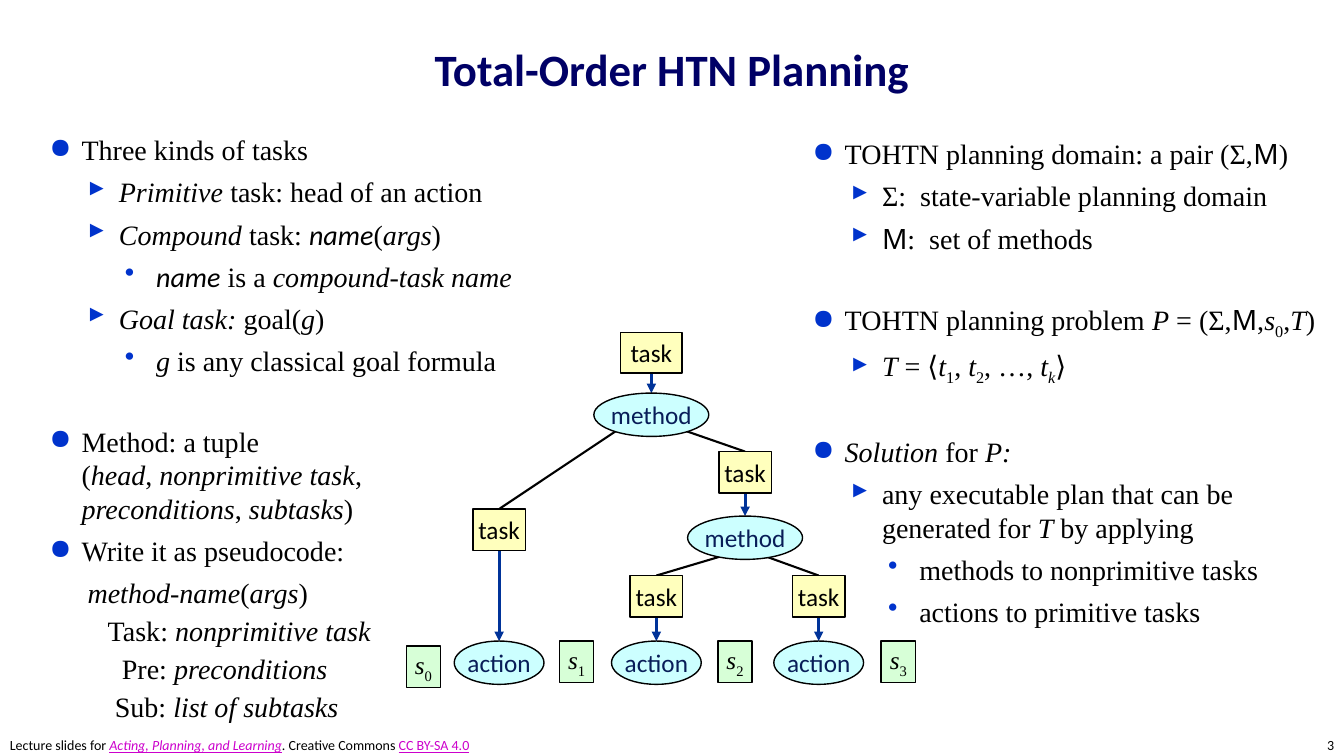
from lxml.etree import SubElement
from pptx import Presentation
from pptx.dml.color import RGBColor
from pptx.enum.shapes import MSO_CONNECTOR, MSO_SHAPE
from pptx.enum.text import MSO_ANCHOR, PP_ALIGN
from pptx.oxml.ns import qn
from pptx.util import Inches, Pt

TITLE = "Total-Order HTN Planning"
FOOT = "Lecture slides for |*Acting, Planning, and Learning*|. Creative Commons |CC BY-SA 4.0|"
PAGE = "3"

# Marks: * italic, _ subscript, ` Calibri, ^ Noto Sans, | link
LEFT = [
    ("dot", 0, "Three kinds of tasks"),
    ("tri", 6, "*Primitive *task: head of an action"),
    ("tri", 6, "*Compound *task: *`name`*(*args*)"),
    ("sub", 6, "*`name`* is a *compound-task name*"),
    ("tri", 6, "*Goal task:* goal(*g*)"),
    ("sub", 6, "*g* is any classical goal formula"),
    ("dot", 34, "Method: a tuple\n(*head*, *nonprimitive task*, *preconditions*, *subtasks*)"),
    ("dot", 6, "Write it as pseudocode:"),
    ("name", 6, "*method-name*(*args*)"),
    ("task", 3, "Task: *nonprimitive task*"),
    ("pre", 3, "Pre: *preconditions*"),
    ("list", 3, "Sub: *list of subtasks*"),
]
RIGHT = [
    ("dot", 0, "TOHTN planning domain: a pair (Σ,^M^)"),
    ("tri", 6, "Σ:\u00a0 state-variable planning domain"),
    ("tri", 6, "^M^:\u00a0 set of methods"),
    ("dot", 34, "TOHTN planning problem *P* = (Σ,^M^,*s*_0_,*T*)"),
    ("tri", 6, "*T* = ⟨*t*_1_, *t*_2_, …, *t*_*k*_⟩"),
    ("dot", 34, "*Solution* for *P:*"),
    ("tri", 6, "any executable plan that can be generated for *T* by applying"),
    ("sub", 6, "methods to nonprimitive tasks"),
    ("sub", 6, "actions to primitive tasks"),
]
LEVELS = {
    "dot": (0.32, 0.32, "●"), "tri": (0.69, 0.31, "▸"), "sub": (1.06, 0.31, "•"),
    "name": (0.38, 0, ""), "task": (0.58, 0, ""), "pre": (0.72, 0, ""), "list": (0.65, 0, ""),
}
KINDS = {
    "root": (MSO_SHAPE.RECTANGLE, 0.61, 0.40, "FFFFBD", "000000", "`task`"),
    "task": (MSO_SHAPE.RECTANGLE, 0.52, 0.41, "FFFFBD", "000000", "`task`"),
    "method": (MSO_SHAPE.OVAL, 1.14, 0.43, "CCFFFF", "081D58", "`method`"),
    "action": (MSO_SHAPE.OVAL, 0.89, 0.43, "CCFFFF", "081D58", "`action`"),
    "state": (MSO_SHAPE.RECTANGLE, 0.34, 0.41, "D7FFD7", "000000", "*s*_{}_"),
}
COLS = (4.2, 4.95, 5.72, 6.46, 6.51, 7.29, 7.39, 8.12, 8.91)
ROWS = (3.3, 3.9, 4.48, 5.05, 5.12, 5.71, 6.36, 6.41)
NODES = {
    "root": ("root", 3, 0), "top": ("method", 3, 1),
    "west": ("task", 1, 3), "east": ("task", 6, 2), "low": ("method", 6, 4),
    "mid": ("task", 4, 5), "far": ("task", 7, 5),
    "act1": ("action", 1, 6), "act2": ("action", 4, 6), "act3": ("action", 7, 6),
    "0": ("state", 0, 7), "1": ("state", 2, 6), "2": ("state", 5, 6), "3": ("state", 8, 6),
}
ARROWS = [("root", "top"), ("west", "act1"), ("east", "low"), ("mid", "act2"), ("far", "act3")]
BRANCHES = [("top", "west", -0.27), ("top", "east", 0.19), ("low", "mid", 0.02), ("low", "far", -0.01)]


def color(code):
    return RGBColor.from_string(code)


def write(para, text, size, ink="000000", face="Times New Roman"):
    marks, part = set(), ""
    for char in text + "\0":
        if char not in "*_`^|\n\0":
            part += char
            continue
        if part:
            run = para.add_run()
            run.text = part
            font = run.font
            font.size = Pt(size)
            font.name = "Calibri" if "`" in marks else "Noto Sans" if "^" in marks else face
            font.italic = "*" in marks
            font.underline = "|" in marks
            font.color.rgb = color("CC00CC" if "|" in marks else ink)
            if "_" in marks:
                run._r.get_or_add_rPr().set("baseline", "-25000")
            part = ""
        if char == "\n":
            para.add_line_break()
        else:
            marks ^= {char}


def pad(frame, wide, high):
    frame.margin_left = frame.margin_right = Inches(wide)
    frame.margin_top = frame.margin_bottom = Inches(high)


def box(slide, area, high=0.05):
    frame = slide.shapes.add_textbox(*map(Inches, area)).text_frame
    frame.word_wrap = True
    pad(frame, 0.1, high)
    return frame


def outline(slide, area, items):
    frame = box(slide, area)
    for num, (level, gap, text) in enumerate(items):
        para = frame.add_paragraph() if num else frame.paragraphs[0]
        left, hang, sign = LEVELS[level]
        props = para._p.get_or_add_pPr()
        props.set("marL", str(Inches(left)))
        props.set("indent", str(-Inches(hang)))
        if sign:
            tint = SubElement(props, qn("a:buClr"))
            SubElement(tint, qn("a:srgbClr")).set("val", "0033CC")
            SubElement(props, qn("a:buChar")).set("char", sign)
        else:
            SubElement(props, qn("a:buNone"))
        para.space_before = Pt(gap)
        write(para, text, 20)


def node(slide, name, kind, col, row):
    form, wide, high, fill, ink, text = KINDS[kind]
    area = COLS[col] - wide / 2, ROWS[row], wide, high
    shape = slide.shapes.add_shape(form, *map(Inches, area))
    shape.shadow.inherit = False
    shape.fill.solid()
    shape.fill.fore_color.rgb = color(fill)
    shape.line.color.rgb = color("000000")
    shape.line.width = Pt(1)
    frame = shape.text_frame
    frame.word_wrap = False
    frame.vertical_anchor = MSO_ANCHOR.MIDDLE
    pad(frame, 0, 0)
    para = frame.paragraphs[0]
    para.alignment = PP_ALIGN.CENTER
    write(para, text.format(name), 18, ink)
    return shape


def link(slide, start, end, ink, width, shift=None):
    x = start.left + start.width // 2 + Inches(shift or 0)
    y = start.top + start.height * 3 // 4
    line = slide.shapes.add_connector(MSO_CONNECTOR.STRAIGHT, x, y, x, y)
    line.end_connect(end, 0)
    line.line.color.rgb = color(ink)
    line.line.width = Pt(width)
    if shift is None:
        line.begin_connect(start, 2)
        SubElement(line.line._get_or_add_ln(), qn("a:tailEnd")).set("type", "triangle")
    SubElement(line._element.spPr, qn("a:effectLst"))
    slide.shapes._spTree.insert(2, line._element)


def main():
    deck = Presentation()
    deck.slide_width, deck.slide_height = Inches(13.33), Inches(7.5)
    slide = deck.slides.add_slide(deck.slide_layouts[5])

    head = slide.shapes.title
    head.left, head.top, head.width, head.height = map(Inches, (0.22, 0.11, 12.89, 0.89))
    head.text_frame.vertical_anchor = MSO_ANCHOR.BOTTOM
    para = head.text_frame.paragraphs[0]
    para.alignment = PP_ALIGN.CENTER
    write(para, TITLE, 32, "000066", "Calibri")
    para.runs[0].font.bold = True

    outline(slide, (0.39, 1.27, 4.92, 6.04), LEFT)
    outline(slide, (7.96, 1.31, 5.34, 4.53), RIGHT)

    made = {name: node(slide, name, *spot) for name, spot in NODES.items()}
    for start, end in ARROWS:
        link(slide, made[start], made[end], "003399", 2.25)
    for start, end, shift in BRANCHES:
        link(slide, made[start], made[end], "000000", 1.5, shift)

    notes = ((0, 4.97, FOOT, PP_ALIGN.LEFT), (12.97, 0.36, PAGE, PP_ALIGN.RIGHT))
    for left, wide, text, side in notes:
        para = box(slide, (left, 7.29, wide, 0.21), 0.02).paragraphs[0]
        para.alignment = side
        write(para, text, 10, face="Calibri")
    deck.save("out.pptx")


if __name__ == "__main__":
    main()
